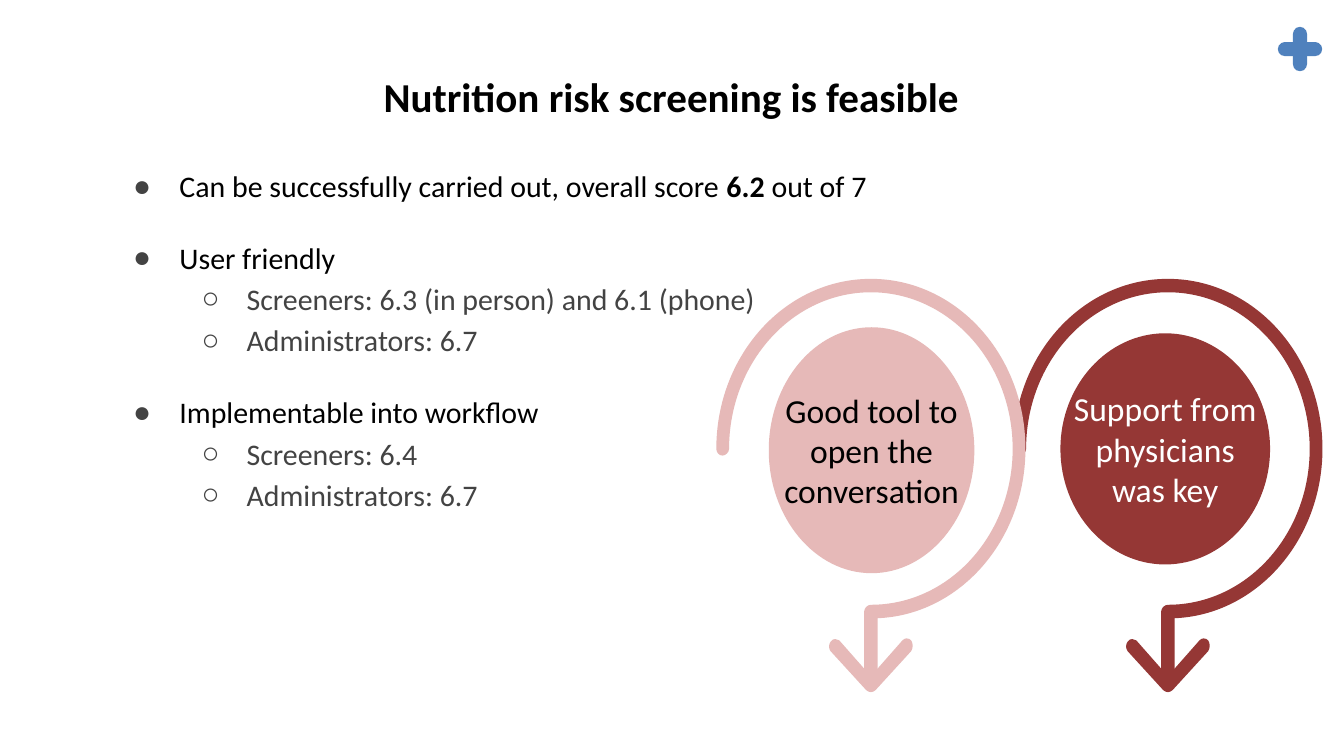
import pptx
import pptx.dml.color
import pptx.enum.shapes
import pptx.enum.text
import pptx.util
from lxml import etree
from pptx.oxml.ns import qn

Inches = pptx.util.Inches
Pt = pptx.util.Pt
RGBColor = pptx.dml.color.RGBColor
SHAPE = pptx.enum.shapes.MSO_SHAPE
ANCHOR = pptx.enum.text.MSO_ANCHOR
CENTER = pptx.enum.text.PP_ALIGN.CENTER

BLACK = RGBColor(0x00, 0x00, 0x00)
WHITE = RGBColor(0xFF, 0xFF, 0xFF)
GREY = RGBColor(0x43, 0x43, 0x43)
BLUE = RGBColor(0x4F, 0x81, 0xBD)
RED = RGBColor(0x95, 0x37, 0x35)
PINK = RGBColor(0xE6, 0xB9, 0xB8)


def add_text(paragraph, text, size=32, color=BLACK, bold=False, align=None):
    run = paragraph.add_run()
    run.text = text
    run.font.name = "Calibri"
    run.font.size = Pt(size)
    run.font.color.rgb = color
    run.font.bold = bold
    if align is not None:
        paragraph.alignment = align


def add_outline(center_x, start, segments, color):
    """Add a closed outline, x counted from center_x; three points make a curve."""
    def place(point):
        return Inches(center_x + point[0]), Inches(point[1])

    builder = slide.shapes.build_freeform(*place(start), scale=1.0)
    builder.add_line_segments([place(p) for part in segments for p in part], close=True)
    outline = builder.convert_to_shape()
    path = outline._element.find(".//" + qn("a:path"))
    lines = iter(path.findall(qn("a:lnTo")))
    for part in segments:
        steps = [next(lines) for _ in part]
        if len(part) == 3:
            curve = etree.Element(qn("a:cubicBezTo"))
            steps[0].addprevious(curve)
            for step in steps:
                curve.append(step[0])
                path.remove(step)
    outline.shadow.inherit = False
    outline.fill.solid()
    outline.fill.fore_color.rgb = color
    outline.line.fill.background()
    return outline


prs = pptx.Presentation()
prs.slide_width = Inches(20)
prs.slide_height = Inches(11.25)
slide = prs.slides.add_slide(prs.slide_layouts[1])

# Corner ornaments: white dots at lower left, blue plus at upper right
dots = [(0.84, 10.08), (0.84, 10.36), (1.01, 10.64), (1.19, 10.36), (1.37, 10.65), (1.54, 10.36)]
ornaments = [(SHAPE.OVAL, x, y, 0.13, 0.13, 0, WHITE) for x, y in dots]
ornaments += [(SHAPE.ROUNDED_RECTANGLE, 19.24, 0.4, 0.21, 0.66, turn, BLUE) for turn in (0, 90)]
for preset, x, y, width, height, turn, color in ornaments:
    ornament = slide.shapes.add_shape(preset, Inches(x), Inches(y), Inches(width), Inches(height))
    if preset == SHAPE.ROUNDED_RECTANGLE:
        ornament.adjustments[0] = 0.5
    ornament.rotation = turn
    ornament.shadow.inherit = False
    ornament.fill.solid()
    ornament.fill.fore_color.rgb = color
    ornament.line.fill.background()

# Title and list
title, body = slide.placeholders
for holder, top, height in ((title, 0.97, 1.25), (body, 2.4, 0.73)):
    holder.left, holder.top = Inches(1.57), Inches(top)
    holder.width, holder.height = Inches(16.85), Inches(height)
    frame = holder.text_frame
    frame.word_wrap = True
    frame.auto_size = pptx.enum.text.MSO_AUTO_SIZE.NONE
    frame.vertical_anchor = ANCHOR.TOP
    frame.margin_left = frame.margin_right = Inches(0.1)
    frame.margin_top = frame.margin_bottom = Inches(0.1)

add_text(title.text_frame.paragraphs[0], "Nutrition risk screening is feasible",
         size=44, bold=True, align=CENTER)

# Level, space before in points, (text, bold) pieces
findings = [
    (0, 0, [("Can be successfully carried out, overall score ", False),
            ("6.2 ", True), ("out of 7", False)]),
    (0, 38, [("User friendly", False)]),
    (1, 0, [("Screeners: 6.3 (in person) and 6.1 (phone)", False)]),
    (1, 0, [("Administrators: 6.7", False)]),
    (0, 39, [("Implementable into workflow", False)]),
    (1, 0, [("Screeners: 6.4", False)]),
    (1, 0, [("Administrators: 6.7", False)]),
]
for number, (level, gap, pieces) in enumerate(findings):
    frame = body.text_frame
    finding = frame.add_paragraph() if number else frame.paragraphs[0]
    finding.level = level
    finding.space_before = Pt(gap)
    finding.line_spacing = (1.0, 1.15)[level]
    for text, bold in pieces:
        add_text(finding, text, color=(BLACK, GREY)[level], bold=bold)
    props = finding._p.get_or_add_pPr()
    props.set("marL", str(Inches(1 + level)))
    props.set("indent", str(Inches((-0.69, -0.67)[level])))
    bullet_color = etree.SubElement(props, qn("a:buClr"))
    etree.SubElement(bullet_color, qn("a:srgbClr")).set("val", str(GREY))
    etree.SubElement(props, qn("a:buChar")).set("char", "●○"[level])

# Two discs, each inside a hooked arrow
hook = [
    [(-1.27, 4.15), (-2.3, 5.28), (-2.3, 6.68)],
    [(-2.3, 6.73), (-2.26, 6.78), (-2.21, 6.78)],
    [(-2.16, 6.78), (-2.11, 6.73), (-2.11, 6.68)],
    [(-2.11, 5.4), (-1.17, 4.35), (0, 4.35)],
    [(1.17, 4.35), (2.11, 5.4), (2.11, 6.68)],
    [(2.11, 7.96), (1.17, 9), (0, 9)],
    [(-0.05, 9), (-0.1, 9.05), (-0.1, 9.1)],
    [(-0.1, 10.05)], [(0.1, 10.05)], [(0.1, 9.2)],
    [(1.32, 9.15), (2.3, 8.04), (2.3, 6.68)],
    [(2.3, 5.28), (1.27, 4.15), (0, 4.15)],
]
arrowhead = [
    [(0.51, 9.5), (0.49, 9.51), (0.47, 9.53)],
    [(0.1, 9.95)], [(0, 10.05)], [(-0.1, 9.95)], [(-0.47, 9.53)],
    [(-0.49, 9.52), (-0.51, 9.51), (-0.53, 9.51)],
    [(-0.56, 9.51), (-0.58, 9.52), (-0.6, 9.55)],
    [(-0.63, 9.59), (-0.63, 9.65), (-0.6, 9.69)],
    [(-0.07, 10.27)],
    [(-0.05, 10.29), (-0.02, 10.3), (0, 10.3)],
    [(0.02, 10.3), (0.05, 10.29), (0.07, 10.27)],
    [(0.6, 9.69)],
    [(0.63, 9.64), (0.63, 9.58), (0.6, 9.53)],
    [(0.58, 9.51), (0.56, 9.5), (0.53, 9.5)],
]
quarters = [(0, -1), (-1, 0), (0, 1), (1, 0), (0, -1)]
BEND = 0.55  # control point distance for a quarter of an ellipse

messages = [
    ("Support from physicians was key", RED, WHITE, 17.38, (17.34, 6.68, 1.56, 1.72)),
    ("Good tool to open the conversation", PINK, BLACK, 12.96, (12.97, 6.7, 1.53, 1.83)),
]
for message, color, text_color, hook_x, (disc_x, disc_y, rx, ry) in messages:
    arcs = []
    for (ax, ay), (bx, by) in zip(quarters, quarters[1:]):
        bends = [(ax + BEND * bx, ay + BEND * by), (bx + BEND * ax, by + BEND * ay), (bx, by)]
        arcs.append([(rx * x, disc_y + ry * y) for x, y in bends])
    disc = add_outline(disc_x, (0, disc_y - ry), arcs, color)
    frame = disc.text_frame
    frame.word_wrap = True
    frame.vertical_anchor = ANCHOR.MIDDLE
    frame.margin_left = frame.margin_right = Inches(0.2)
    frame.margin_top = frame.margin_bottom = Inches(0.2)
    add_text(frame.paragraphs[0], message, size=36, color=text_color, align=CENTER)
    add_outline(hook_x, (0, 4.15), hook, color)
    add_outline(hook_x, (0.53, 9.5), arrowhead, color)

prs.save("out.pptx")
